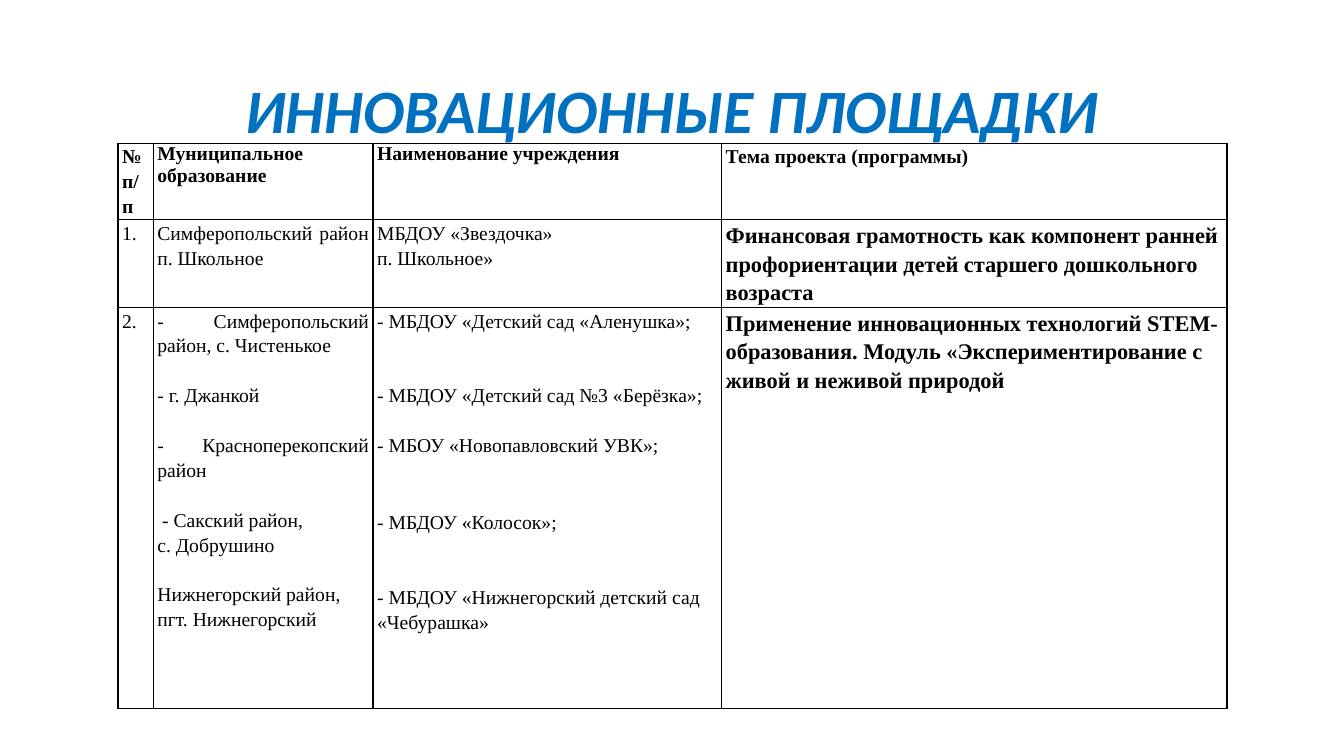
from dataclasses import dataclass

from lxml import etree
from pptx import Presentation
from pptx.dml.color import RGBColor
from pptx.enum.text import MSO_ANCHOR, PP_ALIGN
from pptx.oxml.ns import qn
from pptx.util import Pt

LEFT, CENTER, JUSTIFY = PP_ALIGN.LEFT, PP_ALIGN.CENTER, PP_ALIGN.JUSTIFY
TOP, MIDDLE = MSO_ANCHOR.TOP, MSO_ANCHOR.MIDDLE
TITLE_ONLY = 5


@dataclass(frozen=True)
class Theme:
    title_font: str = "Calibri"
    table_font: str = "Times New Roman"
    title_color: str = "0070C0"
    ink: str = "000000"
    title_size: float = 44
    text_size: float = 14
    topic_size: float = 16
    title_spacing: float = 0.9
    table_spacing: float = 1.15
    line_gap: float = 17.8
    border: float = 1
    inset: float = 2.9


@dataclass(frozen=True)
class Entry:
    """Cell text: each line is a string, or (string, blank lines above it)."""
    lines: tuple
    align: int = JUSTIFY
    bold: bool = False
    size: float = Theme.text_size
    spacing: float = Theme.table_spacing


class SlideBuilder:
    def __init__(self, deck, theme):
        self.theme = theme
        self.page = deck.slides.add_slide(deck.slide_layouts[TITLE_ONLY])

    def style(self, para, font, size, color, bold, italic=False):
        para.font.name = font
        para.font.size = Pt(size)
        para.font.bold = bold
        para.font.italic = italic
        para.font.color.rgb = RGBColor.from_string(color)

    def title(self, text, left, top, width, height):
        theme = self.theme
        box = self.page.shapes.title
        box.left, box.top, box.width, box.height = map(Pt, (left, top, width, height))
        box.text_frame.vertical_anchor = MIDDLE
        para = box.text_frame.paragraphs[0]
        para.text = text
        para.alignment = CENTER
        para.line_spacing = theme.title_spacing
        self.style(para, theme.title_font, theme.title_size, theme.title_color, True, True)

    def table(self, rows, left, top, widths, heights):
        frame = self.page.shapes.add_table(
            len(rows), len(widths), Pt(left), Pt(top), Pt(sum(widths)), Pt(sum(heights)))
        table = frame.table
        table.first_row = table.horz_banding = False
        for column, width in zip(table.columns, widths):
            column.width = Pt(width)
        for row, height, entries in zip(table.rows, heights, rows):
            row.height = Pt(height)
            for cell, entry in zip(row.cells, entries):
                self.fill_cell(cell, entry)

    def fill_cell(self, cell, entry):
        theme = self.theme
        cell.fill.background()
        cell.vertical_anchor = TOP
        cell.margin_left = cell.margin_right = Pt(theme.inset)
        cell.margin_top = cell.margin_bottom = 0
        self.add_borders(cell)
        for index, line in enumerate(entry.lines):
            text, gap = (line, 0) if isinstance(line, str) else line
            frame = cell.text_frame
            para = frame.add_paragraph() if index else frame.paragraphs[0]
            para.text = text
            para.alignment = entry.align
            para.line_spacing = entry.spacing
            para.space_before = Pt(gap * theme.line_gap)
            self.style(para, theme.table_font, entry.size, theme.ink, entry.bold)

    def add_borders(self, cell):
        properties = cell._tc.get_or_add_tcPr()
        for index, side in enumerate(("lnL", "lnR", "lnT", "lnB")):
            line = etree.Element(qn(f"a:{side}"), w=str(Pt(self.theme.border)))
            fill = etree.SubElement(line, qn("a:solidFill"))
            etree.SubElement(fill, qn("a:srgbClr"), val=self.theme.ink)
            properties.insert(index, line)


def heading(text, spacing=Theme.table_spacing):
    return Entry((text,), bold=True, spacing=spacing)


def topic(text):
    return Entry((text,), LEFT, True, Theme.topic_size)


ROWS = [
    [
        heading("№ п/п"),
        heading("Муниципальное образование", 1.0),
        heading("Наименование учреждения", 1.0),
        heading("Тема проекта (программы)"),
    ],
    [
        Entry(("1.",)),
        Entry(("Симферопольский район п. Школьное",)),
        Entry(("МБДОУ «Звездочка»", "п. Школьное»")),
        topic("Финансовая грамотность как компонент ранней профориентации "
              "детей старшего дошкольного возраста"),
    ],
    [
        Entry(("2.",)),
        Entry((
            "- Симферопольский район, с. Чистенькое",
            ("- г. Джанкой", 1),
            ("- Красноперекопский район", 1),
            (" - Сакский район,", 1),
            "с. Добрушино",
            ("Нижнегорский район,", 1),
            "пгт. Нижнегорский",
        )),
        Entry((
            "- МБДОУ «Детский сад «Аленушка»;",
            ("- МБДОУ «Детский сад №3 «Берёзка»;", 2),
            ("- МБОУ «Новопавловский УВК»;", 1),
            ("- МБДОУ «Колосок»;", 2.1),
            ("- МБДОУ «Нижнегорский детский сад «Чебурашка»", 2),
        ), LEFT),
        topic("Применение инновационных технологий STEM-образования. "
              "Модуль «Экспериментирование с живой и неживой природой"),
    ],
]


def main():
    deck = Presentation()
    deck.slide_width, deck.slide_height = Pt(960), Pt(540)
    builder = SlideBuilder(deck, Theme())

    # Title
    builder.title("ИННОВАЦИОННЫЕ ПЛОЩАДКИ", 66, 28.8, 828, 104.4)

    # Table of innovation sites
    builder.table(ROWS, 84.3, 102.3, widths=(25.2, 157, 249, 361),
                  heights=(54.7, 62.6, 286.6))

    deck.save("out.pptx")


if __name__ == "__main__":
    main()
